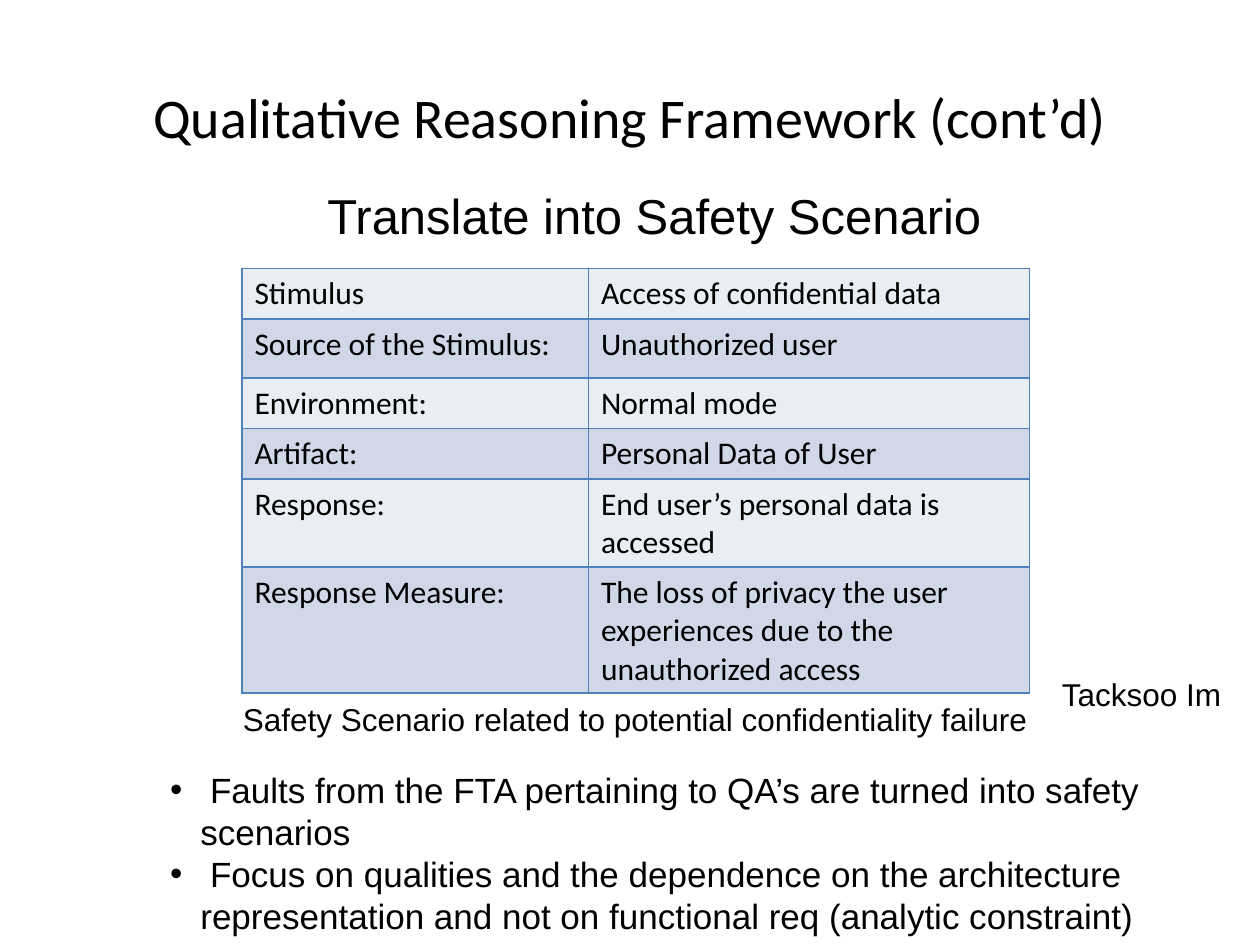
from dataclasses import dataclass

from lxml.etree import SubElement
from pptx import Presentation
from pptx.dml.color import RGBColor
from pptx.enum.text import MSO_ANCHOR, MSO_AUTO_SIZE, PP_ALIGN
from pptx.oxml.ns import qn
from pptx.util import Inches, Pt


@dataclass(frozen=True)
class Theme:
    """Colours, fonts and type sizes of the slide."""
    ink: str = "000000"
    border: str = "4F81BD"
    bands: tuple = ("E9EDF4", "D0D8E8")
    heading_font: str = "Calibri"
    text_font: str = "Arial"
    title_size: int = 32
    subtitle_size: int = 28
    list_size: int = 20
    small_size: int = 18


THEME = Theme()
SCENARIO = (
    ("Stimulus", "Access of confidential data"),
    ("Source of the Stimulus:", "Unauthorized user"),
    ("Environment:", "Normal mode"),
    ("Artifact:", "Personal Data of User"),
    ("Response:", "End user’s personal data is accessed"),
    ("Response Measure:", "The loss of privacy the user experiences due to the unauthorized access"),
)
COLUMN_WIDTHS = (2.75, 3.5)
ROW_HEIGHTS = (0.4, 0.47, 0.4, 0.4, 0.7, 1.0)
FINDINGS = (
    " Faults from the FTA pertaining to QA’s are turned into safety scenarios",
    " Focus on qualities and the dependence on the architecture representation"
    " and not on functional req (analytic constraint)",
)


def add_text(paragraph, text, font_name, size):
    """Add one styled run to a paragraph."""
    run = paragraph.add_run()
    run.text = text
    run.font.name = font_name
    run.font.size = Pt(size)
    run.font.color.rgb = RGBColor.from_string(THEME.ink)


def place(region, box):
    """Move a region to its box of left, top, width and height."""
    region.left, region.top, region.width, region.height = map(Inches, box)


def fill_title(title, box, text):
    """Place the title and write its text."""
    place(title, box)
    title.text_frame.vertical_anchor = MSO_ANCHOR.MIDDLE
    heading = title.text_frame.paragraphs[0]
    heading.alignment = PP_ALIGN.CENTER
    add_text(heading, text, THEME.heading_font, THEME.title_size)


def add_label(slide, box, text, size, wrap=True):
    """Add a single line of free text."""
    label = slide.shapes.add_textbox(*map(Inches, box))
    label.text_frame.word_wrap = wrap
    label.text_frame.auto_size = MSO_AUTO_SIZE.SHAPE_TO_FIT_TEXT
    add_text(label.text_frame.paragraphs[0], text, THEME.text_font, size)


def fill_list(body, box, items):
    """Place the body and write its bulleted items."""
    place(body, box)
    frame = body.text_frame
    frame.auto_size = MSO_AUTO_SIZE.NONE
    for index, item in enumerate(items):
        bullet = frame.add_paragraph() if index else frame.paragraphs[0]
        bullet.space_before = Pt(0)
        properties = bullet._p.get_or_add_pPr()
        properties.set("marL", str(Inches(0.24)))
        properties.set("indent", str(-Inches(0.24)))
        add_text(bullet, item, THEME.text_font, THEME.list_size)


def style_cell(cell, fill):
    """Give a cell its borders and band colour."""
    properties = cell._tc.get_or_add_tcPr()
    for side in ("a:lnL", "a:lnR", "a:lnT", "a:lnB"):
        line = SubElement(properties, qn(side), w=str(Pt(1)))
        solid = SubElement(line, qn("a:solidFill"))
        SubElement(solid, qn("a:srgbClr"), val=THEME.border)
    cell.fill.solid()
    cell.fill.fore_color.rgb = RGBColor.from_string(fill)


def add_scenario_table(slide, box, rows):
    """Add the banded table of scenario parts."""
    table = slide.shapes.add_table(len(rows), len(COLUMN_WIDTHS), *map(Inches, box)).table
    table.first_row = False
    for column, width in zip(table.columns, COLUMN_WIDTHS):
        column.width = Inches(width)
    for index, (row, height, texts) in enumerate(zip(table.rows, ROW_HEIGHTS, rows)):
        row.height = Inches(height)
        for cell, text in zip(row.cells, texts):
            style_cell(cell, THEME.bands[index % 2])
            add_text(cell.text_frame.paragraphs[0], text, THEME.heading_font, THEME.small_size)


def main():
    """Build and save the slide."""
    deck = Presentation()
    deck.slide_width, deck.slide_height = Inches(10), Inches(7.5)
    slide = deck.slides.add_slide(deck.slide_layouts[1])
    fill_title(slide.shapes.title, (0.5, 0.3, 9, 1.25), "Qualitative Reasoning Framework (cont’d)")
    add_label(slide, (1.83, 5.51, 7, 0.4),
              "Safety Scenario related to potential confidentiality failure", THEME.small_size)
    fill_list(slide.placeholders[1], (1.25, 6.05, 8.08, 1.45), FINDINGS)
    add_scenario_table(slide, (1.92, 2.13, sum(COLUMN_WIDTHS), sum(ROW_HEIGHTS)), SCENARIO)
    add_label(slide, (2.5, 1.42, 5.42, 0.57), "Translate into Safety Scenario", THEME.subtitle_size)
    add_label(slide, (8.33, 5.31, 1.48, 0.4), "Tacksoo Im", THEME.small_size, wrap=False)
    deck.save("out.pptx")


if __name__ == "__main__":
    main()
